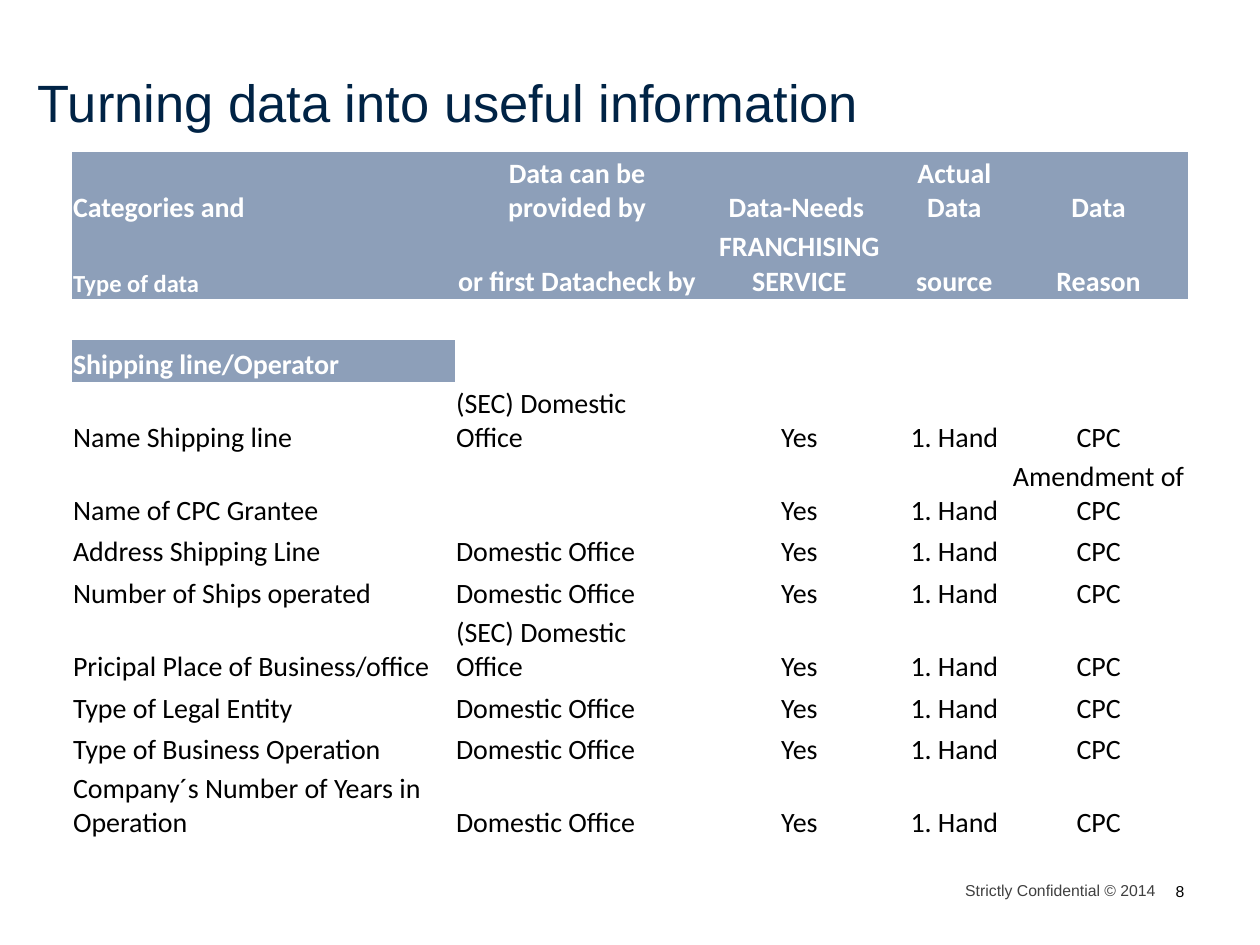
from pptx import Presentation
from pptx.dml.color import RGBColor
from pptx.enum.text import MSO_ANCHOR, MSO_AUTO_SIZE, PP_ALIGN
from pptx.oxml.ns import qn
from pptx.util import Inches, Pt

LEFT, CENTER, RIGHT = PP_ALIGN.LEFT, PP_ALIGN.CENTER, PP_ALIGN.RIGHT
TOP, BOTTOM = MSO_ANCHOR.TOP, MSO_ANCHOR.BOTTOM
NO_AUTOFIT = MSO_AUTO_SIZE.NONE
TITLE_ONLY = 5
PLAIN_TABLE_STYLE = "{2D5ABB26-0587-4C30-8999-92F81FD0307C}"

COLORS = {
    "title": "002345",
    "header": "8D9FB9",
    "white": "FFFFFF",
    "black": "000000",
    "footer": "404040",
}

COLUMN_WIDTHS = [3.04, 1.94, 1.59, 0.87, 1.42]
SINGLE_ROW, DOUBLE_ROW = 0.33, 0.58
COLUMN_ALIGNMENTS = [LEFT, LEFT, CENTER, CENTER, CENTER]

HEADER_ROWS = [
    ["Categories and", "Data can be provided by", "Data-Needs ", "Actual Data", "Data"],
    ["Type of data", "or first Datacheck by", "FRANCHISING SERVICE", "source", "Reason"],
]
SECTION = "Shipping line/Operator"
OFFICE, SEC_OFFICE = "Domestic Office", "(SEC) Domestic Office"
DATA_ITEMS = [
    ("Name Shipping line", SEC_OFFICE, "CPC", DOUBLE_ROW),
    ("Name of CPC Grantee", "", "Amendment of CPC", DOUBLE_ROW),
    ("Address Shipping Line", OFFICE, "CPC", SINGLE_ROW),
    ("Number of Ships operated", OFFICE, "CPC", SINGLE_ROW),
    ("Pricipal Place of Business/office", SEC_OFFICE, "CPC", DOUBLE_ROW),
    ("Type of Legal Entity", OFFICE, "CPC", SINGLE_ROW),
    ("Type of Business Operation", OFFICE, "CPC", SINGLE_ROW),
    ("Company´s Number of Years in Operation", OFFICE, "CPC", DOUBLE_ROW),
]


def write_text(text_frame, text, size, color, font_name, alignment=LEFT, bold=False):
    text_frame.text = text
    paragraph = text_frame.paragraphs[0]
    paragraph.alignment = alignment
    for run in paragraph.runs:
        run.font.name = font_name
        run.font.size = Pt(size)
        run.font.bold = bold
        run.font.color.rgb = RGBColor.from_string(COLORS[color])


def set_frame(text_frame, anchor, top, bottom):
    text_frame.word_wrap = True
    text_frame.auto_size = NO_AUTOFIT
    text_frame.vertical_anchor = anchor
    text_frame.margin_left = text_frame.margin_right = 0
    text_frame.margin_top = Inches(top)
    text_frame.margin_bottom = Inches(bottom)


def add_title(slide, text):
    title = slide.shapes.title
    title.left, title.top = Inches(0.3), Inches(0.45)
    title.width, title.height = Inches(9.29), Inches(0.63)
    set_frame(title.text_frame, BOTTOM, 0, 0.02)
    write_text(title.text_frame, text, 30, "title", "Arial")


def add_footer_text(slide, text, left, top, width, color, alignment):
    box = slide.shapes.add_textbox(Inches(left), Inches(top), Inches(width), Inches(0.24))
    set_frame(box.text_frame, TOP, 0.04, 0)
    write_text(box.text_frame, text, 9, color, "Arial", alignment)


def fill_cell(cell, text, alignment, highlighted=False, size=16):
    cell.vertical_anchor = BOTTOM
    cell.margin_left = cell.margin_right = cell.margin_top = Inches(0.01)
    cell.margin_bottom = 0
    if highlighted:
        cell.fill.solid()
        cell.fill.fore_color.rgb = RGBColor.from_string(COLORS["header"])
    else:
        cell.fill.background()
    color = "white" if highlighted else "black"
    write_text(cell.text_frame, text, size, color, "Calibri", alignment, highlighted)


def add_data_table(slide):
    blank = [""] * len(COLUMN_WIDTHS)
    rows = HEADER_ROWS + [blank, [SECTION] + blank[1:]]
    rows += [[name, provider, "Yes", "1. Hand", reason] for name, provider, reason, _ in DATA_ITEMS]
    heights = [DOUBLE_ROW] * 2 + [SINGLE_ROW] * 2 + [item[-1] for item in DATA_ITEMS]
    table = slide.shapes.add_table(
        len(rows), len(COLUMN_WIDTHS), Inches(0.57), Inches(1.21),
        Inches(sum(COLUMN_WIDTHS)), Inches(sum(heights)),
    ).table
    table.first_row = table.horz_banding = False
    table._tbl.tblPr.find(qn("a:tableStyleId")).text = PLAIN_TABLE_STYLE
    for column, width in zip(table.columns, COLUMN_WIDTHS):
        column.width = Inches(width)
    for row_index, (values, height) in enumerate(zip(rows, heights)):
        table.rows[row_index].height = Inches(height)
        is_header = row_index < len(HEADER_ROWS)
        for column_index, text in enumerate(values):
            alignment = COLUMN_ALIGNMENTS[column_index]
            if is_header and column_index > 0:
                alignment = CENTER
            size = 14 if text == "Type of data" else 16
            cell = table.cell(row_index, column_index)
            fill_cell(cell, text, alignment, is_header or text == SECTION, size)


def main():
    presentation = Presentation()
    presentation.slide_width, presentation.slide_height = Inches(10), Inches(7.5)
    slide = presentation.slides.add_slide(presentation.slide_layouts[TITLE_ONLY])
    add_footer_text(slide, "Strictly Confidential © 2014", 7.59, 6.95, 1.58, "footer", RIGHT)
    add_title(slide, "Turning data into useful information")
    add_footer_text(slide, "8", 9.33, 6.96, 0.31, "black", LEFT)
    add_data_table(slide)
    presentation.save("out.pptx")


if __name__ == "__main__":
    main()
